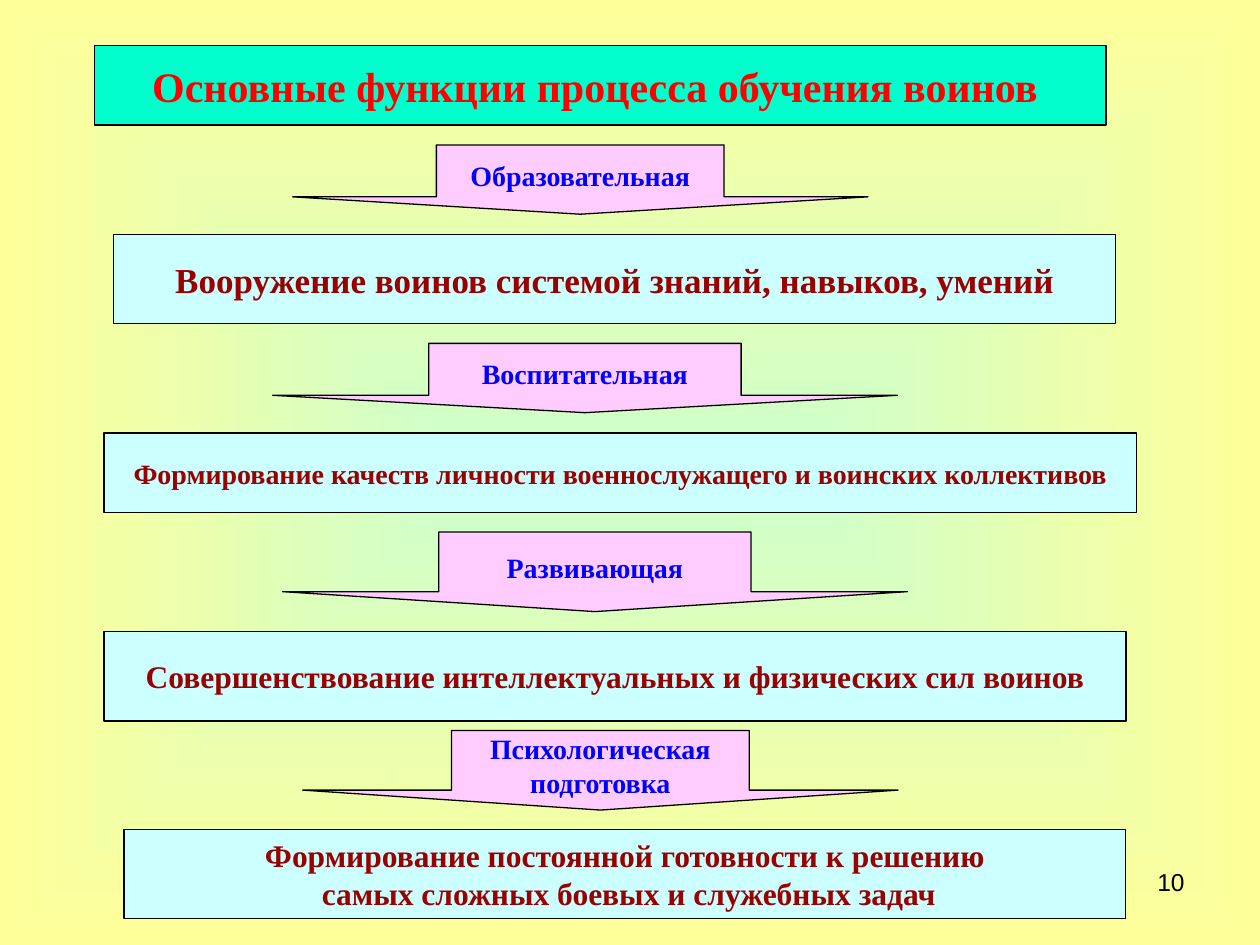
from lxml import etree
from pptx import Presentation
from pptx.dml.color import RGBColor
from pptx.enum import shapes, text
from pptx.oxml import ns
from pptx.util import Pt

COLORS = {
    "center": "CCFFCC",
    "edge": "FFFF99",
    "title": "00FFCC",
    "title_text": "FF0000",
    "arrow": "FFCCFF",
    "arrow_text": "0000FF",
    "box": "CCFFFF",
    "box_text": "990000",
    "black": "000000",
}
RECTANGLE = shapes.MSO_SHAPE.RECTANGLE
ARROW = shapes.MSO_SHAPE.DOWN_ARROW


def color(name):
    return RGBColor.from_string(COLORS[name])


def write(shape, wording, size, font_name, color_name, alignment, bold):
    shape.text_frame.text = wording
    for paragraph in shape.text_frame.paragraphs:
        paragraph.alignment = alignment
        for run in paragraph.runs:
            run.font.size = Pt(size)
            run.font.name = font_name
            run.font.bold = bold
            run.font.color.rgb = color(color_name)


presentation = Presentation()
presentation.slide_width = Pt(720)
presentation.slide_height = Pt(540)
slide = presentation.slides.add_slide(presentation.slide_layouts[6])

background = slide.background.fill
background.gradient()
for stop, name in zip(background.gradient_stops, ("center", "edge")):
    stop.color.rgb = color(name)
gradient = slide.element.find(".//" + ns.qn("a:gradFill"))
gradient.remove(gradient.find(ns.qn("a:lin")))
gradient_path = etree.SubElement(gradient, ns.qn("a:path"), {"path": "shape"})
sides = {side: "50000" for side in "ltrb"}
etree.SubElement(gradient_path, ns.qn("a:fillToRect"), sides)

number = slide.shapes.add_textbox(Pt(516), Pt(492), Pt(168), Pt(37.5))
number.text_frame.word_wrap = True
write(number, "10", 14, "Arial", "black", text.PP_ALIGN.RIGHT, False)

blocks = [
    ("title", 54, 26, 578, 45.5, 24, "Основные функции процесса обучения воинов "),
    ("arrow", 167.2, 82.8, 328.8, 39.6, 16, "Образовательная"),
    ("box", 65, 134, 572.5, 51, 20, "Вооружение воинов системой знаний, навыков, умений"),
    ("arrow", 155.8, 196.2, 357, 39.6, 16, "Воспитательная"),
    ("box", 59.5, 247.5, 590, 45.5, 16,
     "Формирование качеств личности военнослужащего и воинских коллективов"),
    ("arrow", 161.5, 304, 357, 45.5, 16, "Развивающая"),
    ("box", 59.5, 361, 584, 51, 18,
     "Совершенствование интеллектуальных и физических сил воинов"),
    ("arrow", 173, 417.4, 340.2, 45.5, 16, "Психологическая\nподготовка"),
    ("box", 70.8, 474, 572.5, 51, 18,
     "Формирование постоянной готовности к решению\n самых сложных боевых и служебных задач"),
]

for kind, left, top, width, height, size, wording in blocks:
    preset = ARROW if kind == "arrow" else RECTANGLE
    shape = slide.shapes.add_shape(preset, Pt(left), Pt(top), Pt(width), Pt(height))
    if kind == "arrow":
        shape.adjustments[0] = 0.5
        shape.adjustments[1] = 0.25
    shape.shadow.inherit = False
    shape.fill.solid()
    shape.fill.fore_color.rgb = color(kind)
    shape.line.color.rgb = color("black")
    shape.line.width = Pt(0.75)
    shape.text_frame.word_wrap = False
    shape.text_frame.vertical_anchor = text.MSO_ANCHOR.MIDDLE
    write(shape, wording, size, "Times New Roman", kind + "_text",
          text.PP_ALIGN.CENTER, True)

presentation.save("out.pptx")
